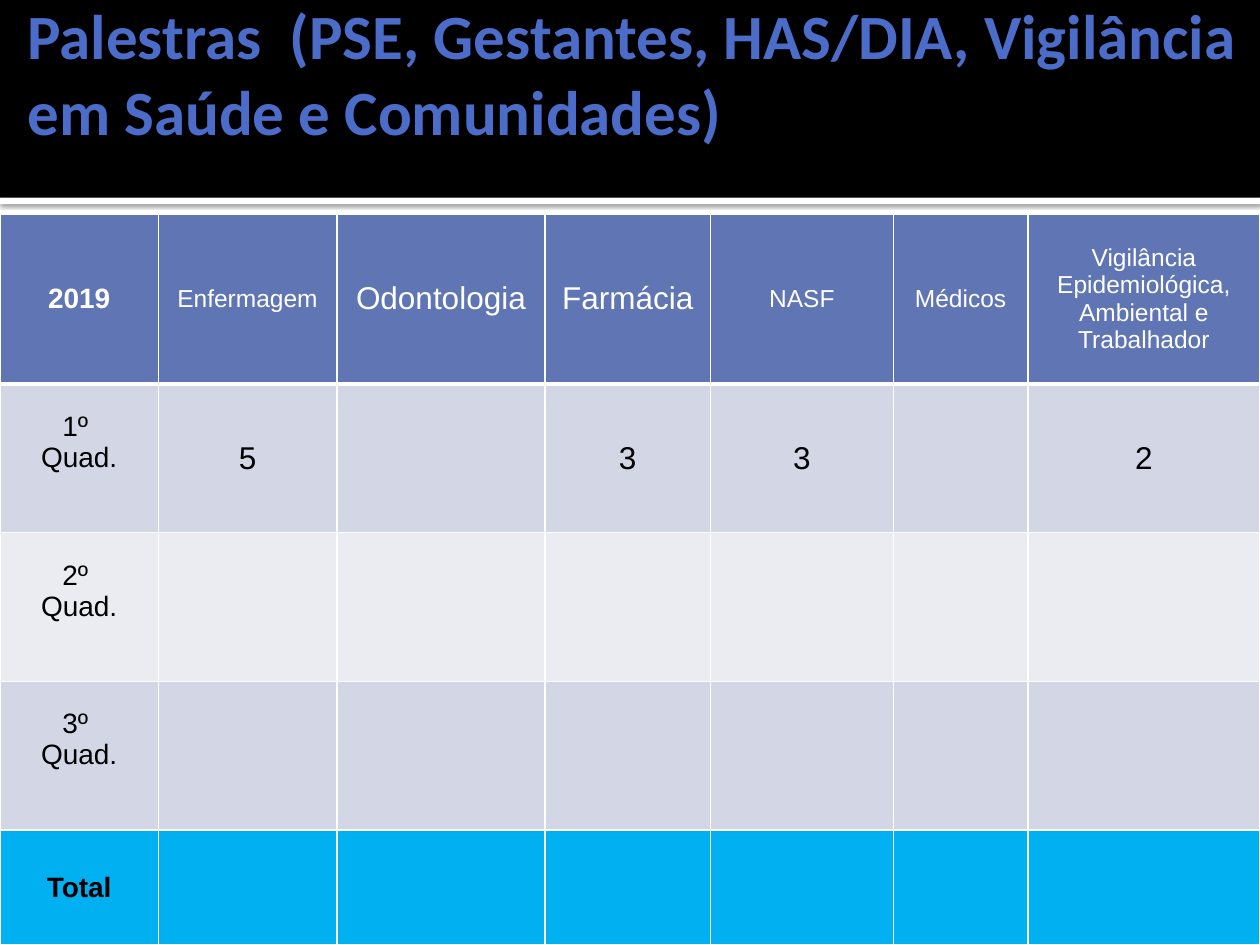
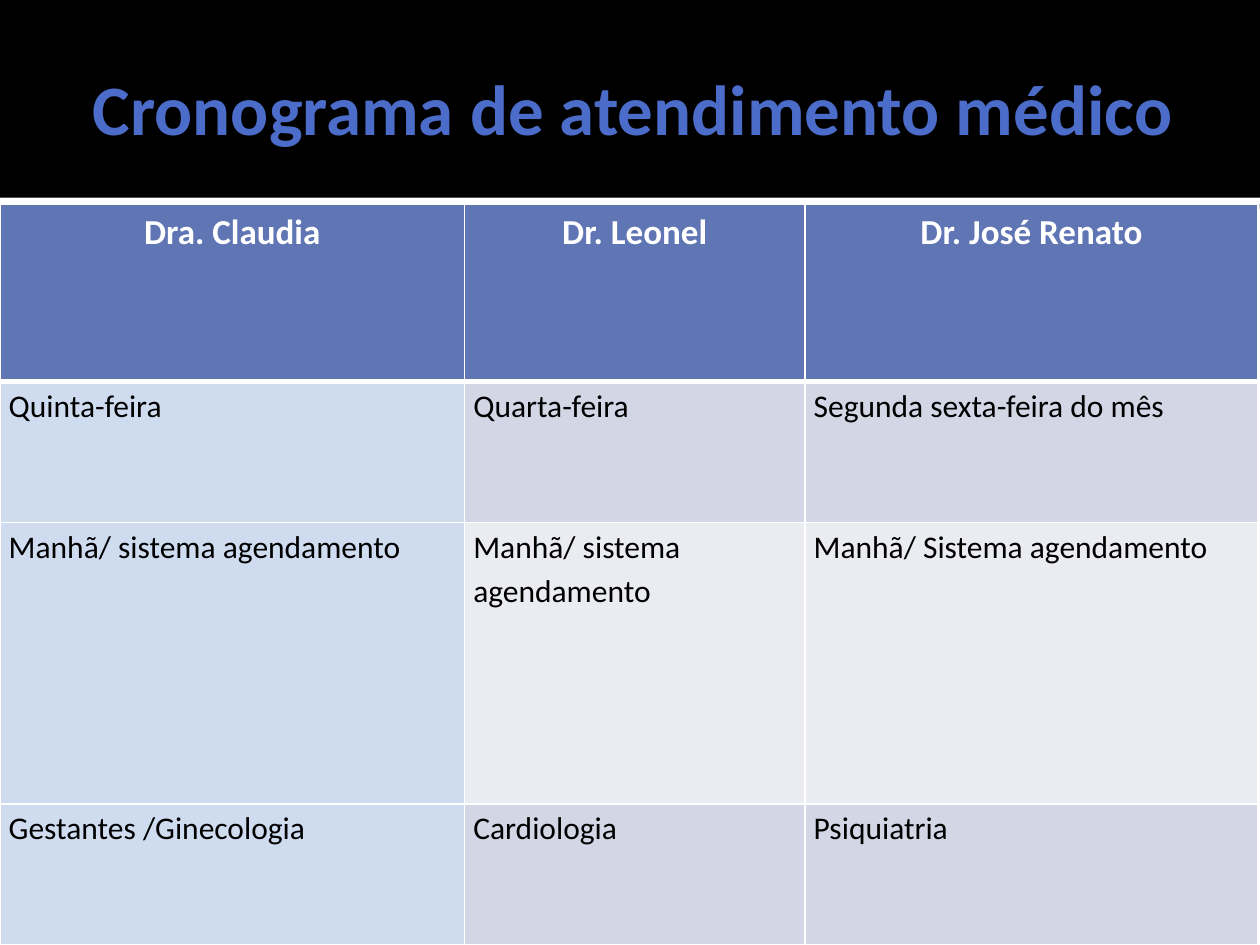
from lxml.etree import SubElement
from pptx import Presentation
from pptx.dml.color import RGBColor
from pptx.enum.shapes import MSO_SHAPE
from pptx.enum.text import MSO_ANCHOR, MSO_AUTO_SIZE, PP_ALIGN
from pptx.oxml import parse_xml
from pptx.oxml.ns import nsdecls, qn
from pptx.util import Pt

HUES = {
    "white": "FFFFFF", "black": "000000", "title": "4B6CC9", "head": "6076B4",
    "dark": "D2D6E5", "light": "EAECF2", "total": "00B0F0", "first": "CFDCF0",
}


def hue(name):
    return RGBColor.from_string(HUES[name])


def edge(cell, row):
    props = cell._tc.get_or_add_tcPr()
    wide = {"T": 3 if row == 1 else 1, "B": 3 if row == 0 else 1}
    for side in "LRTB":
        line = SubElement(props, qn(f"a:ln{side}"), w=str(Pt(wide.get(side, 1))))
        fill = SubElement(line, qn("a:solidFill"))
        SubElement(fill, qn("a:srgbClr"), val=HUES["white"])


deck = Presentation()
deck.slide_width, deck.slide_height = Pt(720), Pt(540)
layout = deck.slide_layouts[5]

talks = {
    "title": "Palestras  (PSE, Gestantes, HAS/DIA, Vigilância em Saúde e Comunidades)",
    "spot": (8.5, -8, 711.5, 98.5), "size": 36, "align": PP_ALIGN.LEFT,
    "top": 122.4, "cols": [90.5, 102, 119, 94.5, 104.5, 77, 132.5],
    "rows": [97, 85, 85, 85, 65.6],
    "cells": [
        ["2019", "Enfermagem", "Odontologia", "Farmácia", "NASF", "Médicos",
         "Vigilância Epidemiológica, Ambiental e Trabalhador"],
        ["1º \nQuad.", "5", "", "3", "3", "", "2"],
        ["2º \nQuad."] + [""] * 6,
        ["3º \nQuad."] + [""] * 6,
        ["Total"] + [""] * 6,
    ],
    "font": "Arial", "heads": [16, 14, 18, 18, 14, 14, 14], "side": 16,
    "pad": (7.2, 3.6), "anchor": MSO_ANCHOR.MIDDLE, "space": 1.0,
}
visits = {
    "title": "Cronograma de atendimento médico",
    "spot": (36, 12, 648, 99), "size": 40.5, "align": PP_ALIGN.CENTER,
    "top": 116.7, "cols": [265.5, 194.5, 259], "rows": [101.3, 80.5, 161, 80.5],
    "cells": [
        ["Dra. Claudia", "Dr. Leonel", "Dr. José Renato"],
        ["Quinta-feira", "Quarta-feira", "Segunda sexta-feira do mês"],
        ["Manhã/ sistema agendamento", "Manhã/ sistema agendamento",
         "Manhã/ Sistema agendamento"],
        ["Gestantes /Ginecologia", "Cardiologia", "Psiquiatria"],
    ],
    "font": "Calibri", "heads": [20] * 3, "side": 18,
    "pad": (5, 0), "anchor": MSO_ANCHOR.TOP, "space": 1.15,
}

slides = [deck.slides.add_slide(layout) for page in (talks, visits)]

for spot, (name, top, high) in enumerate([("white", 113, 3.7), ("black", 0, 113)]):
    band = slides[0].shapes.add_shape(MSO_SHAPE.RECTANGLE, 0, Pt(top), Pt(720), Pt(high))
    band.shadow.inherit = False
    band.fill.solid()
    band.fill.fore_color.rgb = hue(name)
    band.line.fill.background()
    if name == "white":
        glow = band.element.spPr.find(qn("a:effectLst"))
        glow.append(parse_xml(
            f'<a:outerShdw {nsdecls("a")} blurRad="{Pt(2.5)}" dist="{Pt(0.8)}" dir="5400000">'
            f'<a:srgbClr val="{HUES["black"]}"><a:alpha val="60000"/></a:srgbClr></a:outerShdw>'))
    band.element.nvSpPr.cNvPr.id = 20 + spot
    layout.shapes.element.insert(2 + spot, band.element)

for slide, page in zip(slides, (talks, visits)):
    title = slide.shapes.title
    title.left, title.top, title.width, title.height = map(Pt, page["spot"])
    frame = title.text_frame
    frame.text = page["title"]
    frame.word_wrap = True
    frame.auto_size = MSO_AUTO_SIZE.NONE
    frame.vertical_anchor = MSO_ANCHOR.MIDDLE
    frame.margin_left = Pt(7.2)
    frame.margin_right = frame.margin_top = frame.margin_bottom = Pt(3.6)
    para = frame.paragraphs[0]
    para.alignment = page["align"]
    para.font.name, para.font.size, para.font.bold = "Calibri", Pt(page["size"]), True
    para.font.color.rgb = hue("title")

    cols, rows = page["cols"], page["rows"]
    table = slide.shapes.add_table(
        len(rows), len(cols), 0, Pt(page["top"]), Pt(sum(cols)), Pt(sum(rows))).table
    for col, wide in zip(table.columns, cols):
        col.width = Pt(wide)
    for row, high in zip(table.rows, rows):
        row.height = Pt(high)

    for r, line in enumerate(page["cells"]):
        for c, text in enumerate(line):
            cell = table.cell(r, c)
            edge(cell, r)
            tone = "head" if r == 0 else "dark" if r % 2 else "light"
            if page is visits and r and c == 0:
                tone = "first"
            if line[0] == "Total":
                tone = "total"
            cell.fill.solid()
            cell.fill.fore_color.rgb = hue(tone)
            cell.vertical_anchor = page["anchor"]
            cell.margin_left = cell.margin_right = Pt(page["pad"][0])
            cell.margin_top = cell.margin_bottom = Pt(page["pad"][1])
            if "Quad." in text:
                cell.margin_bottom = Pt(22)
            if not text:
                continue
            cell.text = text
            size = page["heads"][c] if r == 0 else page["side"] if c == 0 else 18
            for para in cell.text_frame.paragraphs:
                mid = page is talks or r == 0
                para.alignment = PP_ALIGN.CENTER if mid else PP_ALIGN.LEFT
                para.line_spacing = page["space"]
                para.font.name, para.font.size = page["font"], Pt(size)
                para.font.bold = text in ("2019", "Total") or (page is visits and r == 0)
                para.font.color.rgb = hue("black" if r else "white")

deck.save("out.pptx")
